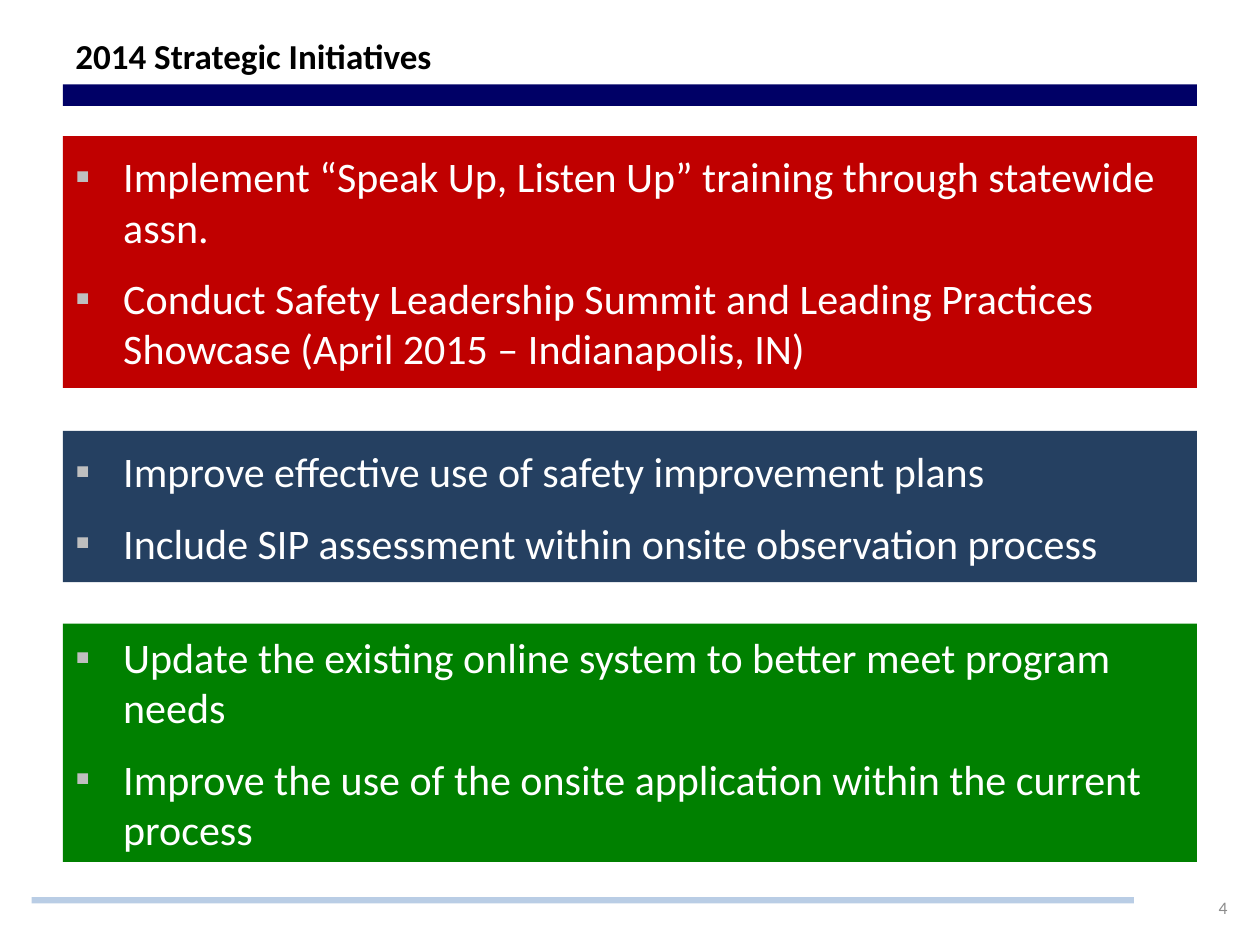
from lxml import etree
from pptx import Presentation
from pptx.dml.color import RGBColor
from pptx.enum import shapes, text
from pptx.oxml.ns import qn
from pptx.util import Inches, Pt

COLORS = {
    "navy": "000066", "pale_blue": "B9CDE5", "red": "C00000",
    "slate": "254061", "green": "008000", "bullet": "BFBFBF",
    "black": "000000", "white": "FFFFFF", "gray": "8C8C8C",
}
LEFT, WIDTH, INDENT = 0.5, 9, 0.38

# top, height, colour, bullet items
PANELS = [
    (1.08, 2, "red", [
        "Implement “Speak Up, Listen Up” training through statewide assn.",
        "Conduct Safety Leadership Summit and Leading Practices Showcase "
        "(April 2015 – Indianapolis, IN)"]),
    (3.42, 1.2, "slate", [
        "Improve effective use of safety improvement plans",
        "Include SIP assessment within onsite observation process"]),
    (4.95, 1.89, "green", [
        "Update the existing online system to better meet program needs",
        "Improve the use of the onsite application within the current process"]),
]


def rgb(name):
    return RGBColor.from_string(COLORS[name])


def add_bar(s, left, top, width, height, color):
    bar = s.shapes.add_shape(shapes.MSO_SHAPE.RECTANGLE, Inches(left),
                             Inches(top), Inches(width), Inches(height))
    bar.shadow.inherit = False
    bar.fill.solid()
    bar.fill.fore_color.rgb = rgb(color)
    bar.line.fill.background()
    return bar


def write_paragraph(p, content, size, color, bold=False,
                    align=text.PP_ALIGN.LEFT):
    p.text = content
    p.alignment = align
    for r in p.runs:
        r.font.name = "Calibri"
        r.font.size = Pt(size)
        r.font.bold = bold
        r.font.color.rgb = rgb(color)


def add_label(s, left, top, width, height, content, size, color, **style):
    tf = s.shapes.add_textbox(Inches(left), Inches(top), Inches(width),
                              Inches(height)).text_frame
    tf.word_wrap = True
    tf.vertical_anchor = text.MSO_ANCHOR.MIDDLE
    write_paragraph(tf.paragraphs[0], content, size, color, **style)


def set_bullet(p):
    """Give the paragraph a gray square bullet with a hanging indent."""
    props = p._p.get_or_add_pPr()
    props.set("marL", str(Inches(INDENT)))
    props.set("indent", str(-Inches(INDENT)))
    bullet_color = etree.SubElement(props, qn("a:buClr"))
    etree.SubElement(bullet_color, qn("a:srgbClr"), val=COLORS["bullet"])
    etree.SubElement(props, qn("a:buFont"), typeface="Calibri")
    etree.SubElement(props, qn("a:buChar"), char="▪")


def add_panel(s, top, height, color, items):
    tf = add_bar(s, LEFT, top, WIDTH, height, color).text_frame
    tf.word_wrap = True
    tf.vertical_anchor = text.MSO_ANCHOR.MIDDLE
    for i, item in enumerate(items):
        p = tf.add_paragraph() if i else tf.paragraphs[0]
        write_paragraph(p, item, 24, "white")
        p.space_before = p.space_after = Pt(6)
        set_bullet(p)


def main():
    prs = Presentation()
    prs.slide_width, prs.slide_height = Inches(10), Inches(7.5)
    s = prs.slides.add_slide(prs.slide_layouts[6])
    add_bar(s, LEFT, 0.67, WIDTH, 0.17, "navy")
    add_bar(s, 0.25, 7.12, 8.75, 0.05, "pale_blue")
    add_label(s, LEFT, 0.13, WIDTH, 0.62, "2014 Strategic Initiatives",
              20, "black", bold=True)
    for panel in PANELS:
        add_panel(s, *panel)
    add_label(s, 9.42, 7, 0.42, 0.4, "4", 10, "gray",
              align=text.PP_ALIGN.RIGHT)
    prs.save("out.pptx")


if __name__ == "__main__":
    main()
